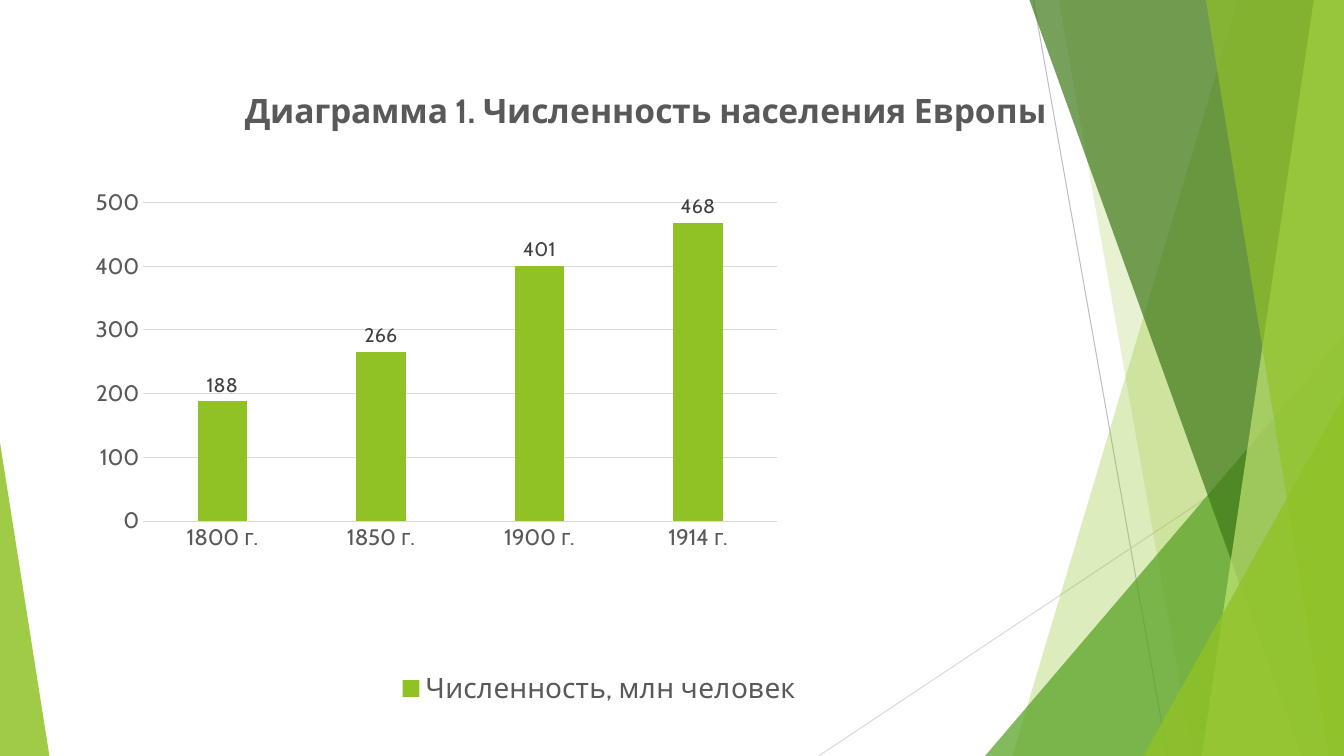
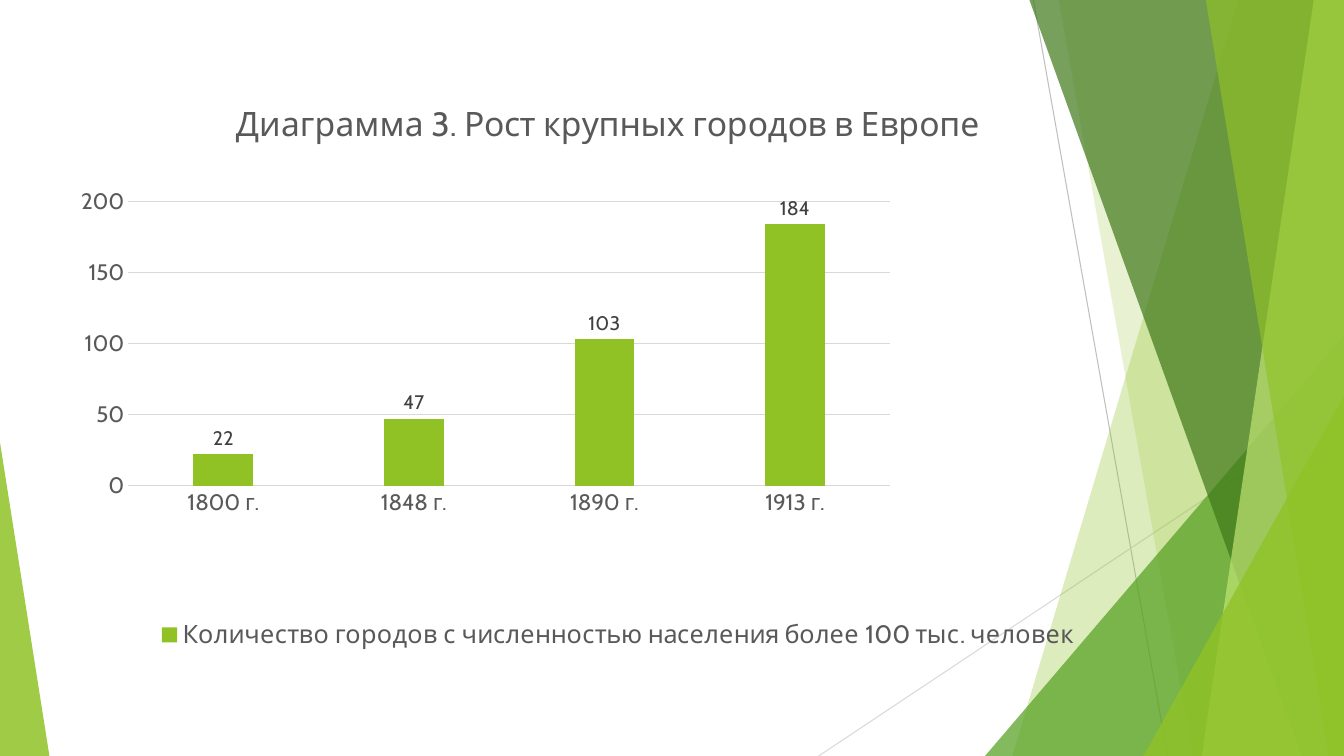
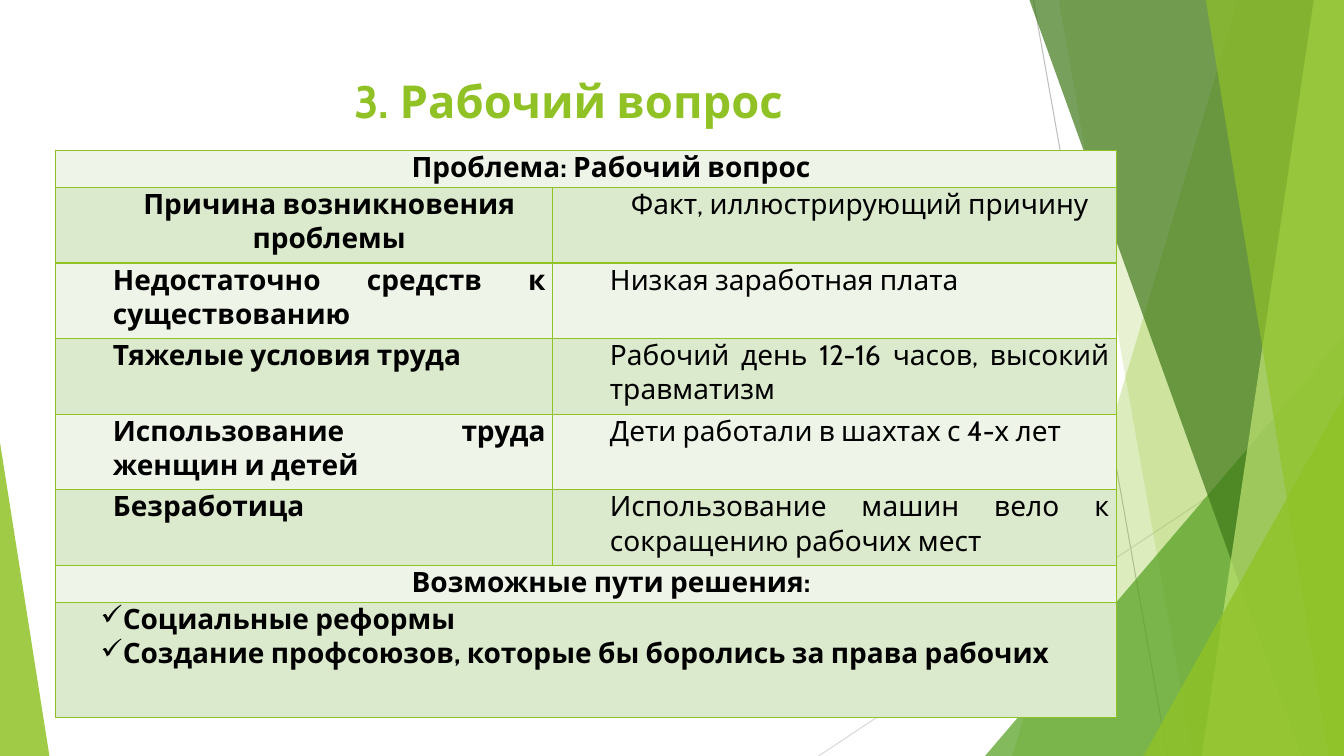
from dataclasses import dataclass

from pptx import Presentation
from pptx.chart.data import CategoryChartData
from pptx.dml.color import RGBColor
from pptx.enum.chart import XL_CHART_TYPE as ChartType
from pptx.enum.chart import XL_LABEL_POSITION as LabelPosition
from pptx.enum.chart import XL_LEGEND_POSITION as LegendPosition
from pptx.enum.chart import XL_TICK_MARK as TickMark
from pptx.enum.shapes import MSO_CONNECTOR as Connector
from pptx.enum.shapes import MSO_SHAPE as Shape
from pptx.enum.text import MSO_ANCHOR as Anchor
from pptx.enum.text import PP_ALIGN as Align
from pptx.oxml import parse_xml
from pptx.oxml.ns import nsdecls
from pptx.presentation import Presentation as Deck
from pptx.slide import Slide
from pptx.text.text import Font
from pptx.util import Inches, Pt


@dataclass(frozen=True)
class Theme:
    font: str = "Cabin"
    accent: str = "90C226"
    leaf: str = "54A021"
    forest: str = "3F7819"
    lime: str = "C0E474"
    ray: str = "BFBFBF"
    grid: str = "D9D9D9"
    chart_text: str = "595959"
    label_text: str = "404040"
    table_text: str = "000000"
    row_fills: tuple[str, str] = ("EEF4E8", "DBE9CD")
    title_size: float = 32.4
    chart_title_size: float = 24
    table_size: float = 20
    axis_size: float = 16
    label_size: float = 14
    thin: float = 0.75


THEME = Theme()
WIDTH, HEIGHT = 13.33, 7.5


@dataclass(frozen=True)
class Area:
    left: float
    top: float
    width: float
    height: float

    def lengths(self) -> tuple[Inches, ...]:
        return tuple(Inches(v) for v in (self.left, self.top, self.width, self.height))


@dataclass(frozen=True)
class Ray:
    start: tuple[float, float]
    end: tuple[float, float]
    color: str


@dataclass(frozen=True)
class Blade:
    """A full-height band that runs to the right edge of the slide."""
    top_left: float
    bottom_left: float
    color: str
    opacity: int


@dataclass(frozen=True)
class Corner:
    area: Area
    apex: float
    color: str
    opacity: int


@dataclass(frozen=True)
class ColumnChart:
    area: Area
    plot: Area
    title: str
    title_at: tuple[float, float]
    title_bold: bool
    series: str
    values: dict[str, int]
    maximum: int
    step: int
    legend_size: float


@dataclass(frozen=True)
class Row:
    height: float
    cells: tuple[str, ...]
    align: Align = Align.JUSTIFY


DECOR = (
    Ray((10.25, 0), (11.58, HEIGHT), THEME.ray),
    Ray((WIDTH, 4.03), (8.12, HEIGHT), THEME.grid),
    Blade(12.28, 10.04, THEME.accent, 30),
    Blade(10.5, 11.83, THEME.accent, 20),
    Corner(Area(9.77, 3.33, 3.56, 4.17), 1, THEME.leaf, 72),
    Blade(10.21, 12.91, THEME.forest, 70),
    Blade(13.03, 11.92, THEME.lime, 70),
    Blade(11.96, 13.18, THEME.accent, 65),
    Corner(Area(11.34, 3.93, 1.99, 3.57), 1, THEME.accent, 80),
    Corner(Area(0, 4.39, 0.49, 3.11), 0, THEME.accent, 85),
)

POPULATION = ColumnChart(
    area=Area(0.74, 0.58, 10.4, 6.48),
    plot=Area(1.42, 2.01, 6.29, 3.16),
    title="Диаграмма 1. Численность населения Европы",
    title_at=(2.37, 0.8),
    title_bold=True,
    series="Численность, млн человек",
    values={"1800 г.": 188, "1850 г.": 266, "1900 г.": 401, "1914 г.": 468},
    maximum=500,
    step=100,
    legend_size=20,
)

CITIES = ColumnChart(
    area=Area(0.54, 0.72, 11.19, 5.78),
    plot=Area(1.27, 2, 7.56, 2.82),
    title="Диаграмма 3. Рост крупных городов в Европе",
    title_at=(2.28, 0.93),
    title_bold=False,
    series="Количество городов с численностью населения более 100 тыс. человек",
    values={"1800 г.": 22, "1848 г.": 47, "1890 г.": 103, "1913 г.": 184},
    maximum=200,
    step=50,
    legend_size=18,
)

LABOUR_COLUMNS = (4.93, 5.59)
LABOUR_ROWS = (
    Row(0.37, ("Проблема: Рабочий вопрос",), Align.CENTER),
    Row(0.75, ("Причина возникновения проблемы", "Факт, иллюстрирующий причину"), Align.CENTER),
    Row(0.75, ("Недостаточно средств к существованию", "Низкая заработная плата")),
    Row(0.75, ("Тяжелые условия труда", "Рабочий день 12-16 часов, высокий травматизм")),
    Row(0.75, ("Использование труда женщин и детей", "Дети работали в шахтах с 4-х лет")),
    Row(0.75, ("Безработица", "Использование машин вело к сокращению рабочих мест")),
    Row(0.37, ("Возможные пути решения:",), Align.CENTER),
    Row(1.14, ("Социальные реформы\nСоздание профсоюзов, которые бы боролись за права рабочих",)),
)


def rgb(color: str) -> RGBColor:
    return RGBColor.from_string(color)


def style_font(font: Font, size: float, color: str, bold: bool = False) -> None:
    font.name = THEME.font
    font.size = Pt(size)
    font.bold = bold
    font.color.rgb = rgb(color)


def draw_ray(shapes, ray: Ray) -> None:
    points = [Inches(v) for v in ray.start + ray.end]
    line = shapes.add_connector(Connector.STRAIGHT, *points)
    line.line.color.rgb = rgb(ray.color)
    line.line.width = Pt(THEME.thin)
    properties = line.element.xpath("./p:spPr")[0]
    properties.append(parse_xml(f"<a:effectLst {nsdecls('a')}/>"))


def draw_panel(shapes, panel: Blade | Corner) -> None:
    if isinstance(panel, Corner):
        shape = shapes.add_shape(Shape.ISOSCELES_TRIANGLE, *panel.area.lengths())
        shape.adjustments[0] = panel.apex
    else:
        outline = ((panel.top_left, 0), (WIDTH, 0), (WIDTH, HEIGHT), (panel.bottom_left, HEIGHT))
        start, *rest = [(Inches(x), Inches(y)) for x, y in outline]
        builder = shapes.build_freeform(*start)
        builder.add_line_segments(rest, close=True)
        shape = builder.convert_to_shape()
    shape.shadow.inherit = False
    shape.line.fill.background()
    shape.fill.solid()
    shape.fill.fore_color.rgb = rgb(panel.color)
    color = shape.element.xpath("./p:spPr/a:solidFill/a:srgbClr")[0]
    color.append(parse_xml(f'<a:alpha {nsdecls("a")} val="{panel.opacity * 1000}"/>'))


def decorate_master(deck: Deck, page: Slide) -> None:
    """Draw the decoration as one group on the page, then move it to the master."""
    group = page.shapes.add_group_shape()
    for item in DECOR:
        if isinstance(item, Ray):
            draw_ray(group.shapes, item)
        else:
            draw_panel(group.shapes, item)
    for number, tag in enumerate(group.element.xpath(".//p:cNvPr"), 100):
        tag.set("id", str(number))
    deck.slide_master.shapes.element.insert(2, group.element)


def set_layout(parent, index: int, **settings: float | str) -> None:
    """Place a chart part by hand, replacing any automatic layout."""
    for old in parent.xpath("./c:layout"):
        parent.remove(old)
    values = "".join(f'<c:{name} val="{value}"/>' for name, value in settings.items())
    parent.insert(index, parse_xml(
        f"<c:layout {nsdecls('c')}><c:manualLayout>{values}</c:manualLayout></c:layout>"))


def add_column_chart(page: Slide, content: ColumnChart) -> None:
    data = CategoryChartData()
    data.categories = list(content.values)
    data.add_series(content.series, list(content.values.values()))
    area, inner = content.area, content.plot
    chart = page.shapes.add_chart(ChartType.COLUMN_CLUSTERED, *area.lengths(), data).chart
    style_font(chart.font, THEME.axis_size, THEME.chart_text)

    chart.has_title = True
    para = chart.chart_title.text_frame.paragraphs[0]
    para.text = content.title
    style_font(para.font, THEME.chart_title_size, THEME.chart_text, content.title_bold)
    left, top = content.title_at
    set_layout(chart.chart_title.element, 1, xMode="edge", yMode="edge",
               x=(left - area.left) / area.width, y=(top - area.top) / area.height)
    set_layout(chart.element.xpath(".//c:plotArea")[0], 0,
               layoutTarget="inner", xMode="edge", yMode="edge",
               x=(inner.left - area.left) / area.width,
               y=(inner.top - area.top) / area.height,
               w=inner.width / area.width, h=inner.height / area.height)

    chart.has_legend = True
    chart.legend.position = LegendPosition.BOTTOM
    chart.legend.include_in_layout = False
    style_font(chart.legend.font, content.legend_size, THEME.chart_text)

    for axis in (chart.category_axis, chart.value_axis):
        axis.major_tick_mark = axis.minor_tick_mark = TickMark.NONE
        style_font(axis.tick_labels.font, THEME.axis_size, THEME.chart_text)
    values = chart.value_axis
    values.minimum_scale, values.maximum_scale = 0, content.maximum
    values.major_unit = content.step
    values.format.line.fill.background()
    for line in (chart.category_axis.format.line, values.major_gridlines.format.line):
        line.color.rgb = rgb(THEME.grid)
        line.width = Pt(THEME.thin)

    plot = chart.plots[0]
    plot.gap_width, plot.overlap = 219, -27
    plot.vary_by_categories = False
    fill = plot.series[0].format.fill
    fill.solid()
    fill.fore_color.rgb = rgb(THEME.accent)
    plot.has_data_labels = True
    labels = plot.data_labels
    labels.show_value = True
    labels.position = LabelPosition.OUTSIDE_END
    style_font(labels.font, THEME.label_size, THEME.label_text)


def add_title(page: Slide, text: str) -> None:
    title = page.shapes.title
    title.left, title.top, title.width, title.height = Area(0.74, 0.68, 9.8, 0.81).lengths()
    frame = title.text_frame
    frame.text = text
    frame.word_wrap = True
    frame.vertical_anchor = Anchor.TOP
    para = frame.paragraphs[0]
    para.alignment = Align.CENTER
    style_font(para.font, THEME.title_size, THEME.accent, bold=True)


def add_labour_table(page: Slide) -> None:
    area = Area(0.55, 1.49, sum(LABOUR_COLUMNS), sum(row.height for row in LABOUR_ROWS))
    frame = page.shapes.add_table(len(LABOUR_ROWS), len(LABOUR_COLUMNS), *area.lengths())
    table = frame.table
    table.first_row = table.horz_banding = False
    for column, width in zip(table.columns, LABOUR_COLUMNS):
        column.width = Inches(width)

    for number, row in enumerate(LABOUR_ROWS):
        table.rows[number].height = Inches(row.height)
        cells = table.rows[number].cells
        for cell in cells:
            cell.fill.solid()
            cell.fill.fore_color.rgb = rgb(THEME.row_fills[number % 2])
            cell.margin_left = cell.margin_right = Inches(0.07)
            cell.margin_top = cell.margin_bottom = 0
        if len(row.cells) == 1:
            cells[0].merge(cells[1])
        for column, text in enumerate(row.cells):
            box = cells[column].text_frame
            box.text = text
            for para in box.paragraphs:
                para.alignment = row.align
                style_font(para.font, THEME.table_size, THEME.table_text, bold=column == 0)

    for properties in frame.element.xpath(".//a:tcPr"):
        for index, side in enumerate(("lnL", "lnR", "lnT", "lnB")):
            properties.insert(index, parse_xml(
                f'<a:{side} {nsdecls("a")} w="{Pt(1)}"><a:solidFill>'
                f'<a:srgbClr val="{THEME.accent}"/></a:solidFill></a:{side}>'))
    for properties in frame.element.xpath(".//a:pPr"):
        properties.set("marL", str(Inches(0.5)))
        properties.set("indent", "0")
    for properties in frame.element.xpath(".//a:tr[last()]//a:pPr"):
        properties.set("marL", str(Inches(0.38)))
        properties.insert(0, parse_xml(f'<a:buChar {nsdecls("a")} char="✓"/>'))


def main() -> None:
    deck = Presentation()
    deck.slide_width, deck.slide_height = Inches(WIDTH), Inches(HEIGHT)
    title_only, blank = deck.slide_layouts[5], deck.slide_layouts[6]

    population_page = deck.slides.add_slide(blank)
    decorate_master(deck, population_page)
    add_column_chart(population_page, POPULATION)

    add_column_chart(deck.slides.add_slide(blank), CITIES)

    labour_page = deck.slides.add_slide(title_only)
    add_title(labour_page, "3. Рабочий вопрос")
    add_labour_table(labour_page)

    deck.save("out.pptx")


if __name__ == "__main__":
    main()
